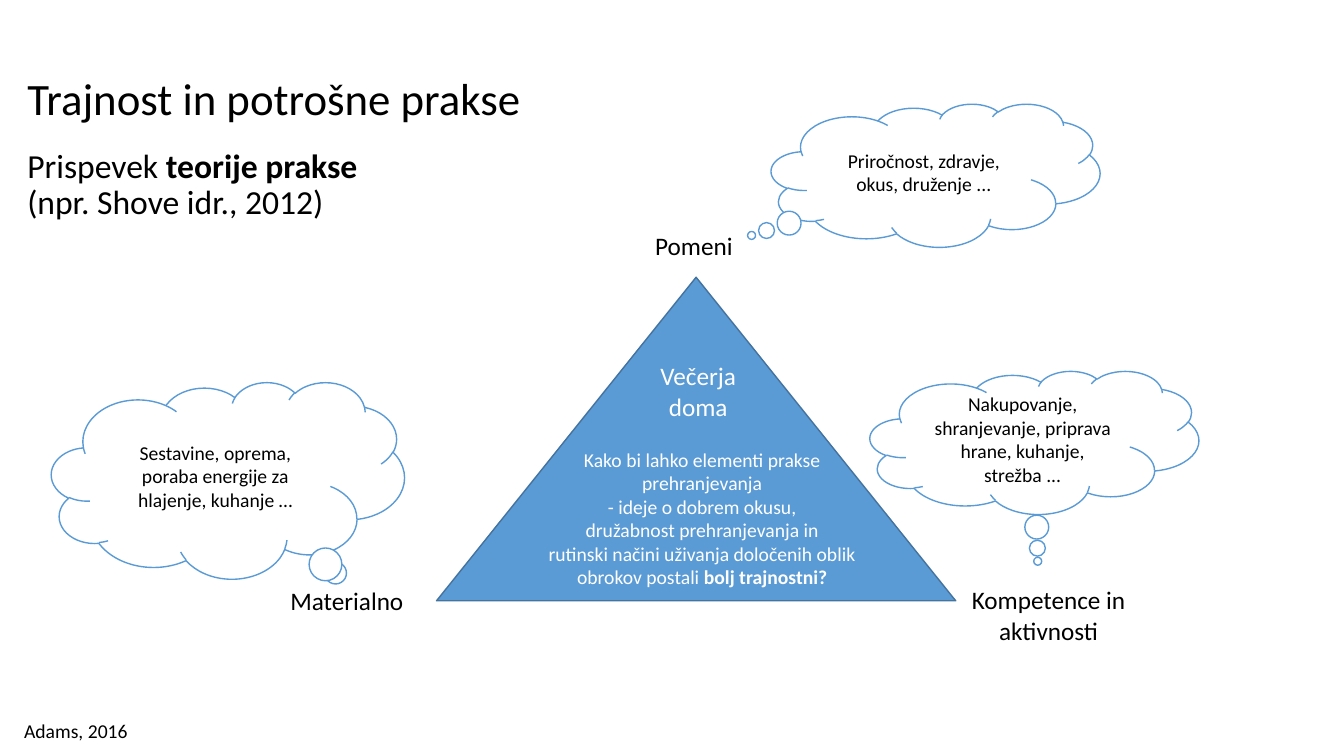
from dataclasses import dataclass

from pptx import Presentation
from pptx import util as u
from pptx.dml.color import RGBColor
from pptx.enum import shapes, text
from pptx.oxml.ns import qn

WIDE, HIGH = u.Inches(13.33), u.Inches(7.5)
MID, LEFT = text.PP_ALIGN.CENTER, text.PP_ALIGN.LEFT


@dataclass(frozen=True)
class Theme:
    font: str = "Calibri"
    ink: str = "000000"
    paper: str = "FFFFFF"
    blue: str = "5B9BD5"
    edge: str = "43739E"
    title: int = 32
    lead: int = 24
    label: int = 18
    note: int = 14


THEME = Theme()


def rgb(hue):
    return RGBColor.from_string(hue)


def area(left, top, width, height):
    """Turn percentages of the slide into a left, top, width, height box."""
    shares = ((left, WIDE), (top, HIGH), (width, WIDE), (height, HIGH))
    return [int(part * full / 100) for part, full in shares]


def write(frame, words, size, hue, aligns):
    """Fill a frame; *stars* mark bold, \\v a line break, \\n a new paragraph.

    The last alignment holds for all remaining paragraphs.
    """
    for row, line in enumerate(words.split("\n")):
        para = frame.add_paragraph() if row else frame.paragraphs[0]
        para.alignment = aligns[min(row, len(aligns) - 1)]
        font = para.font
        font.name, font.size = THEME.font, u.Pt(size)
        font.color.rgb = rgb(hue)
        for turn, part in enumerate(line.split("*")):
            for step, piece in enumerate(part.split("\v")):
                if step:
                    para.add_line_break()
                if piece:
                    run = para.add_run()
                    run.text = piece
                    if turn % 2:
                        run.font.bold = True


def head(holder, box, words, size, anchor):
    """Move and fill a placeholder as plain left-aligned text."""
    holder.left, holder.top, holder.width, holder.height = area(*box)
    frame = holder.text_frame
    frame.auto_size = text.MSO_AUTO_SIZE.NONE
    frame.vertical_anchor = anchor
    para = frame.paragraphs[0]
    props = para._p.get_or_add_pPr()
    props.set("marL", "0")
    props.set("indent", "0")
    props.append(props.makeelement(qn("a:buNone"), {}))
    para.line_spacing = 0.9
    para.space_before = u.Pt(0)
    write(frame, words, size, THEME.ink, [LEFT])


def label(slide, box, words, size, hue=THEME.ink, aligns=(LEFT,)):
    frame = slide.shapes.add_textbox(*area(*box)).text_frame
    frame.word_wrap = False
    frame.auto_size = text.MSO_AUTO_SIZE.SHAPE_TO_FIT_TEXT
    write(frame, words, size, hue, aligns)


def form(slide, kind, box, fill, edge):
    shape = slide.shapes.add_shape(kind, *area(*box))
    shape.shadow.inherit = False
    shape.fill.solid()
    shape.fill.fore_color.rgb = rgb(fill)
    shape.line.color.rgb = rgb(edge)
    shape.line.width = u.Pt(1)
    return shape


def cloud(slide, box, tail, words):
    shape = form(slide, shapes.MSO_SHAPE.CLOUD_CALLOUT, box,
                 THEME.paper, THEME.blue)
    for spot, value in enumerate(tail):
        shape.adjustments[spot] = value
    frame = shape.text_frame
    frame.word_wrap = True
    frame.vertical_anchor = text.MSO_ANCHOR.MIDDLE
    write(frame, words, THEME.note, THEME.ink, [MID])


def main():
    deck = Presentation()
    deck.slide_width, deck.slide_height = WIDE, HIGH
    slide = deck.slides.add_slide(deck.slide_layouts[1])

    title, body = slide.placeholders
    head(title, (1.28, 2.27, 97.45, 14.93), "Trajnost in potrošne prakse",
         THEME.title, text.MSO_ANCHOR.BOTTOM)
    head(body, (1.28, 19.07, 97.45, 73.2),
         "Prispevek *teorije prakse*\v(npr. Shove idr., 2012)",
         THEME.lead, text.MSO_ANCHOR.TOP)

    form(slide, shapes.MSO_SHAPE.ISOSCELES_TRIANGLE,
         (32.48, 36.67, 38.63, 42.8), THEME.blue, THEME.edge)
    label(slide, (20.86, 76.8, 11.25, 5.33), "Materialno", THEME.label)
    label(slide, (71.57, 76.67, 15.15, 9.47), "Kompetence in\naktivnosti",
          THEME.label, aligns=(LEFT, MID))
    label(slide, (48.01, 29.87, 8.48, 5.33), "Pomeni", THEME.label)

    cloud(slide, (57.39, 13.73, 24.46, 18.93), (-0.56, 0.42),
          "Priročnost, zdravje, okus, druženje ...")
    cloud(slide, (3.83, 50.53, 26.26, 26), (0.31, 0.48),
          "Sestavine, oprema, poraba energije za hlajenje, kuhanje …")
    cloud(slide, (64.74, 49.07, 24.46, 18.93), (0.01, 0.83),
          "Nakupovanje, shranjevanje, priprava hrane, kuhanje, strežba ...")

    label(slide, (47.64, 47.07, 8.63, 9.47), "Večerja\ndoma",
          THEME.label, THEME.paper, [MID])
    label(slide, (39.61, 58.53, 25.28, 20.13),
          "Kako bi lahko elementi prakse\nprehranjevanja\n"
          "- ideje o dobrem okusu,\ndružabnost prehranjevanja in\n"
          "rutinski načini uživanja določenih oblik\n"
          "obrokov postali *bolj trajnostni?*",
          THEME.note, THEME.paper, [MID])
    label(slide, (1.05, 94.4, 10.28, 4.53), "Adams, 2016", THEME.note)

    deck.save("out.pptx")


if __name__ == "__main__":
    main()
